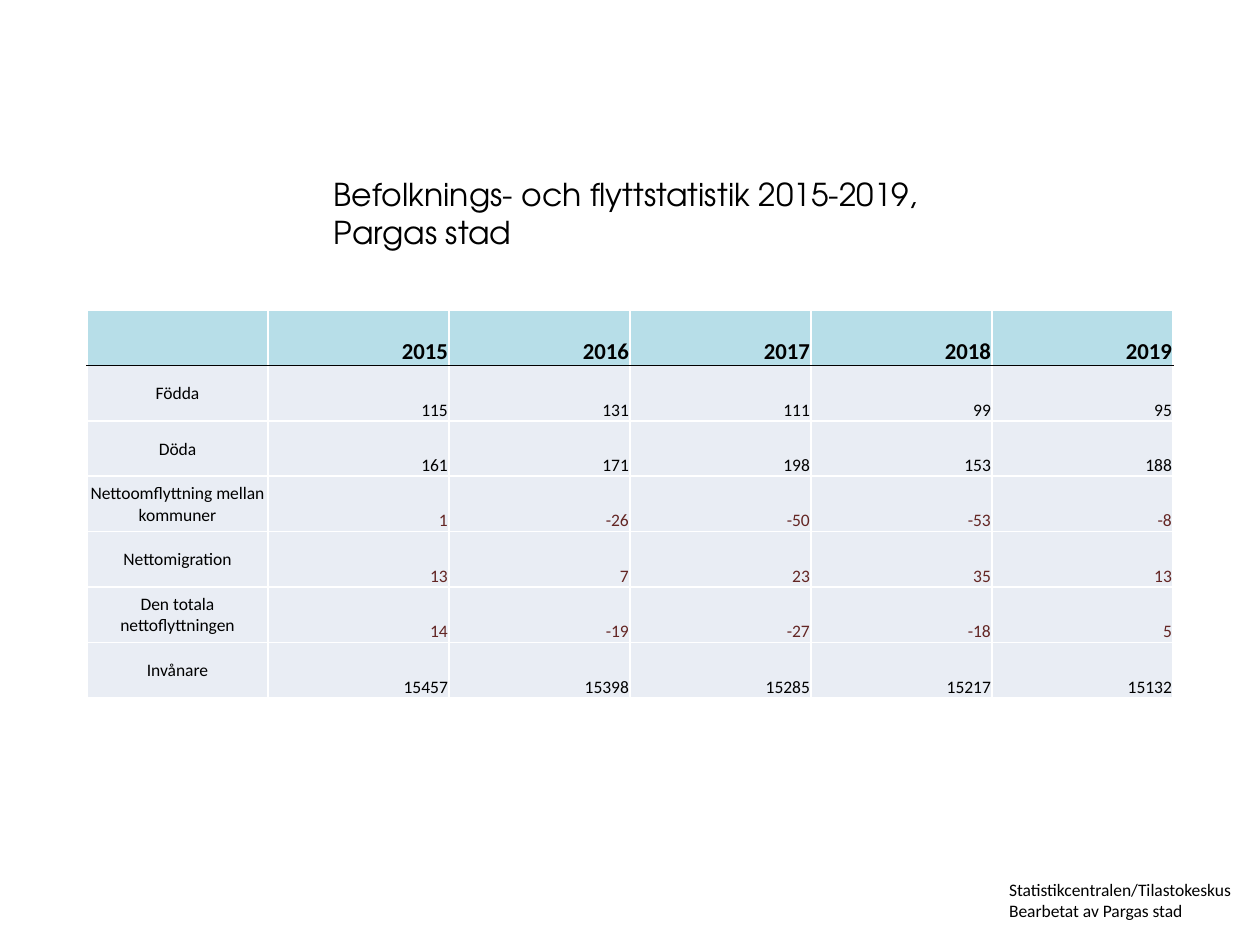
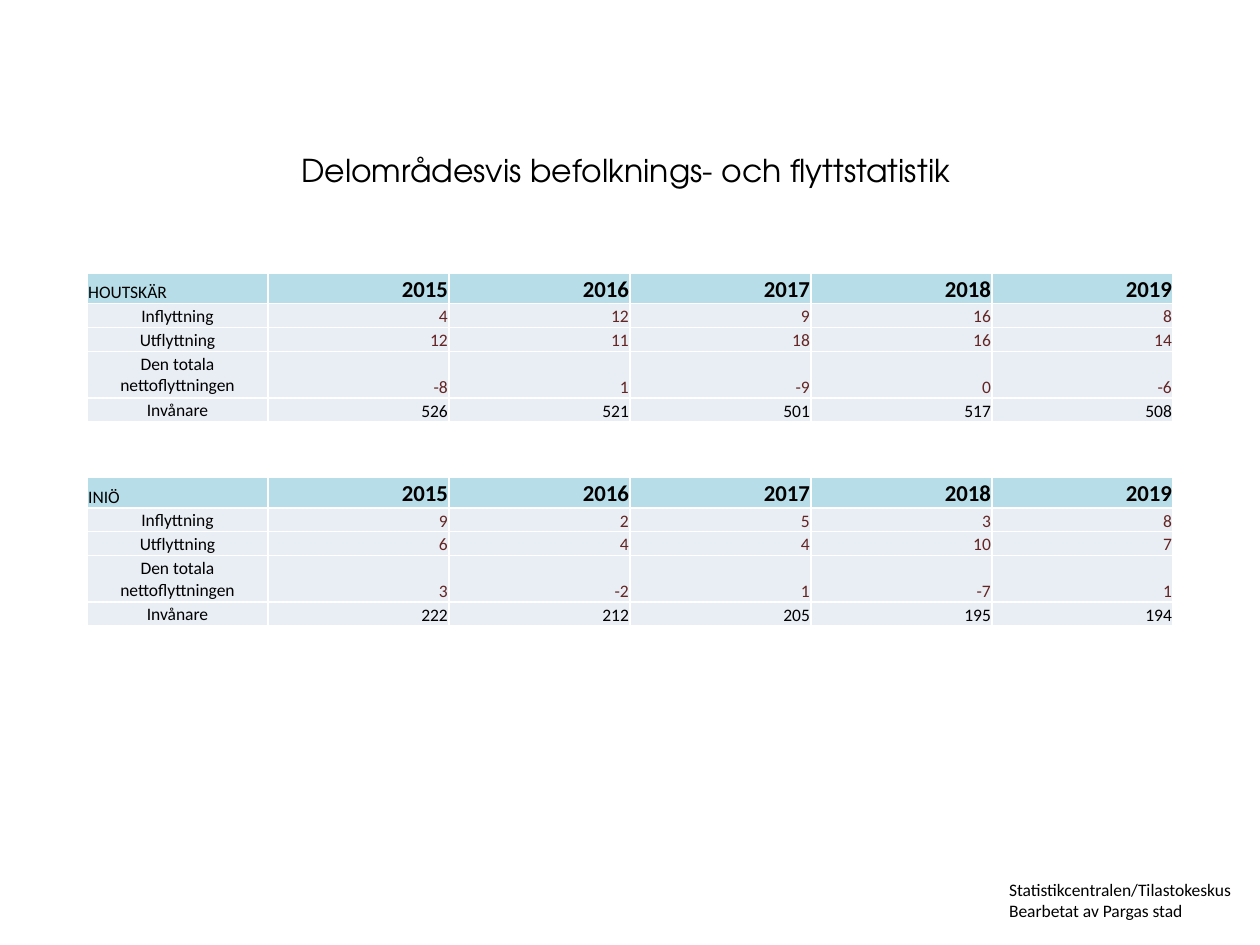
from dataclasses import dataclass

from lxml.etree import SubElement
from pptx import Presentation
from pptx.dml.color import RGBColor
from pptx.enum.text import MSO_ANCHOR, MSO_AUTO_SIZE, PP_ALIGN
from pptx.oxml.ns import qn
from pptx.util import Inches, Pt


@dataclass(frozen=True)
class Theme:
    head: str = "B7DEE8"
    body: str = "E9EDF4"
    ink: str = "000000"
    flow: str = "632523"
    rule: str = "FFFFFF"
    font: str = "Calibri"
    display: str = "TeX Gyre Adventor"
    title: int = 18
    year: int = 13
    text: int = 10


@dataclass(frozen=True)
class Grid:
    """A table by year: its name, place, row heights and data rows."""
    name: str
    top: float
    heights: tuple[float, ...]
    rows: dict[str, tuple[int, ...]]
    line: bool = False  # black line under the header


@dataclass(frozen=True)
class Page:
    title: tuple[str, ...]
    box: tuple[float, float, float, float]
    grids: tuple[Grid, ...]


THEME = Theme()
YEARS = range(2015, 2020)
LEFT, WIDTH = 0.69, 8.62
SOURCE = ("Statistikcentralen/Tilastokeskus", "Bearbetat av Pargas stad")
TOTAL = "Den totala nettoflyttningen"
BLACK_ROWS = {"Födda", "Döda", "Invånare"}
AREA_ROWS = (0.24, 0.19, 0.19, 0.37, 0.19)

PAGES = (
    Page(
        ("Befolknings- och flyttstatistik 2015-2019,", "Pargas stad"),
        (2.55, 1.34, 5.61, 1.31),
        (
            Grid("", 2.46, (0.44,) * 7, {
                "Födda": (115, 131, 111, 99, 95),
                "Döda": (161, 171, 198, 153, 188),
                "Nettoomflyttning mellan kommuner": (1, -26, -50, -53, -8),
                "Nettomigration": (13, 7, 23, 35, 13),
                TOTAL: (14, -19, -27, -18, 5),
                "Invånare": (15457, 15398, 15285, 15217, 15132),
            }, line=True),
        ),
    ),
    Page(
        ("Delområdesvis befolknings- och flyttstatistik",),
        (2.29, 1.15, 6.06, 0.71),
        (
            Grid("HOUTSKÄR", 2.17, AREA_ROWS, {
                "Inflyttning": (4, 12, 9, 16, 8),
                "Utflyttning": (12, 11, 18, 16, 14),
                TOTAL: (-8, 1, -9, 0, -6),
                "Invånare": (526, 521, 501, 517, 508),
            }),
            Grid("INIÖ", 3.79, AREA_ROWS, {
                "Inflyttning": (9, 2, 5, 3, 8),
                "Utflyttning": (6, 4, 4, 10, 7),
                TOTAL: (3, -2, 1, -7, 1),
                "Invånare": (222, 212, 205, 195, 194),
            }),
        ),
    ),
)


def add_run(para, text: str, size: int, font: str = THEME.font,
            color: str = THEME.ink, bold: bool = False) -> None:
    run = para.add_run()
    run.text = text
    run.font.size = Pt(size)
    run.font.name = font
    run.font.bold = bold
    run.font.color.rgb = RGBColor.from_string(color)


def add_edge(cell, side: str, color: str, width: float) -> None:
    props = cell._tc.get_or_add_tcPr()
    edge = SubElement(props, qn(f"a:ln{side}"), w=str(Pt(width)))
    fill = SubElement(edge, qn("a:solidFill"))
    SubElement(fill, qn("a:srgbClr"), val=color)


def fill_cell(cell, text: str, fill: str, align: PP_ALIGN,
              anchor: MSO_ANCHOR = MSO_ANCHOR.BOTTOM, size: int = THEME.text,
              color: str = THEME.ink, bold: bool = False, dark: str = "") -> None:
    """Format a cell; dark names the side that gets the black line."""
    for side in "LRTB":
        look = (THEME.ink, 0.5) if side == dark else (THEME.rule, 1)
        add_edge(cell, side, *look)
    cell.fill.solid()
    cell.fill.fore_color.rgb = RGBColor.from_string(fill)
    cell.margin_left = cell.margin_right = cell.margin_top = Inches(0.01)
    cell.margin_bottom = 0
    cell.vertical_anchor = anchor
    para = cell.text_frame.paragraphs[0]
    para.alignment = align
    if text:
        add_run(para, text, size, color=color, bold=bold)


def add_grid(slide, grid: Grid) -> None:
    count = len(YEARS) + 1
    table = slide.shapes.add_table(
        len(grid.heights), count, Inches(LEFT), Inches(grid.top),
        Inches(WIDTH), Inches(sum(grid.heights))).table
    table.first_row = table.horz_banding = False
    for col in table.columns:
        col.width = Inches(WIDTH / count)
    for row, height in zip(table.rows, grid.heights):
        row.height = Inches(height)

    # Header row
    under = "B" if grid.line else ""
    fill_cell(table.cell(0, 0), grid.name, THEME.head, PP_ALIGN.LEFT, dark=under)
    for c, year in enumerate(YEARS, 1):
        fill_cell(table.cell(0, c), str(year), THEME.head, PP_ALIGN.RIGHT,
                  size=THEME.year, bold=True, dark=under)

    # Data rows
    for r, (label, values) in enumerate(grid.rows.items(), 1):
        over = "T" if grid.line and r == 1 else ""
        color = THEME.ink if label in BLACK_ROWS else THEME.flow
        fill_cell(table.cell(r, 0), label, THEME.body, PP_ALIGN.CENTER,
                  MSO_ANCHOR.MIDDLE, dark=over)
        for c, value in enumerate(values, 1):
            fill_cell(table.cell(r, c), str(value), THEME.body,
                      PP_ALIGN.RIGHT, color=color, dark=over)


def set_title(slide, page: Page) -> None:
    title = slide.shapes.title
    title.left, title.top, title.width, title.height = map(Inches, page.box)
    frame = title.text_frame
    frame.word_wrap = True
    frame.auto_size = MSO_AUTO_SIZE.SHAPE_TO_FIT_TEXT
    frame.vertical_anchor = MSO_ANCHOR.TOP
    for i, line in enumerate(page.title):
        para = frame.add_paragraph() if i else frame.paragraphs[0]
        para.alignment = PP_ALIGN.LEFT
        add_run(para, line, THEME.title, THEME.display)


def add_source(slide) -> None:
    box = slide.shapes.add_textbox(*map(Inches, (7.91, 6.93, 2.02, 0.44)))
    frame = box.text_frame
    frame.word_wrap = True
    frame.auto_size = MSO_AUTO_SIZE.SHAPE_TO_FIT_TEXT
    para = frame.paragraphs[0]
    for i, line in enumerate(SOURCE):
        if i:
            para.add_line_break()
        add_run(para, line, THEME.text)


def main() -> None:
    deck = Presentation()
    deck.slide_width, deck.slide_height = Inches(10), Inches(7.5)
    for page in PAGES:
        slide = deck.slides.add_slide(deck.slide_layouts.get_by_name("Title Only"))
        add_source(slide)
        set_title(slide, page)
        for grid in page.grids:
            add_grid(slide, grid)
    deck.save("out.pptx")


if __name__ == "__main__":
    main()
